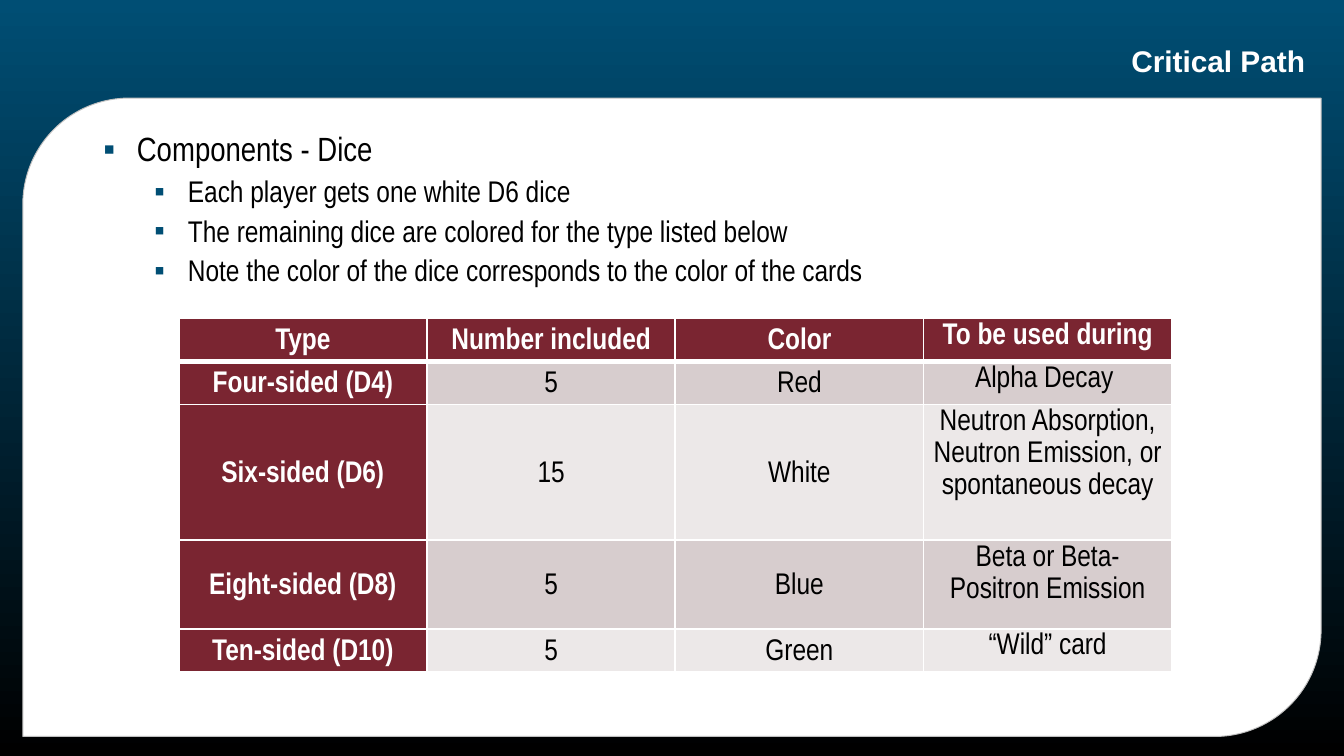
import lxml.etree
import pptx
import pptx.dml.color
import pptx.enum.shapes
import pptx.enum.text
import pptx.oxml.ns
import pptx.util

RGB = pptx.dml.color.RGBColor
BLUE = RGB(0x00, 0x4E, 0x74)
BLACK = RGB(0x00, 0x00, 0x00)
WHITE = RGB(0xFF, 0xFF, 0xFF)
GREY = RGB(0xBF, 0xBF, 0xBF)
WINE = RGB(0x7A, 0x25, 0x31)
DARK = RGB(0xD7, 0xCD, 0xCE)
LIGHT = RGB(0xEC, 0xE8, 0xE8)

WIDE = 10
HIGH = WIDE * 9 / 16
NARROW = "Arial Narrow"
ALIGN = pptx.enum.text.PP_ALIGN
ANCHOR = pptx.enum.text.MSO_ANCHOR
inch = pptx.util.Inches

POINTS = [
    (0, "Components - Dice"),
    (1, "Each player gets one white D6 dice"),
    (1, "The remaining dice are colored for the type listed below"),
    (1, "Note the color of the dice corresponds to the color of the cards"),
]
DICE = [
    ("Type", "Number included", "Color", "To be used during"),
    ("Four-sided (D4)", "5", "Red", "Alpha Decay "),
    ("Six-sided (D6)", "15", "White",
     "Neutron Absorption, Neutron Emission, or spontaneous decay"),
    ("Eight-sided (D8)", "5", "Blue", "Beta or Beta-Positron Emission"),
    ("Ten-sided (D10)", "5", "Green", "“Wild” card"),
]
ROWS = [0.32, 0.32, 1.01, 0.66, 0.32]


def place(box):
    return [inch(side) for side in box]


def add(parent, tag, **attrs):
    return lxml.etree.SubElement(parent, pptx.oxml.ns.qn(tag), **attrs)


def style(para, face, size, color, bold=False):
    for run in para.runs:
        font = run.font
        font.name, font.size, font.bold = face, pptx.util.Pt(size), bold
        font.color.rgb = color


def bullet(para, left):
    props = para._p.get_or_add_pPr()
    props.set("marL", str(inch(left)))
    props.set("indent", str(inch(-0.25)))
    add(add(props, "a:buClr"), "a:srgbClr", val=str(BLUE))
    add(props, "a:buFont", typeface="Arial")
    add(props, "a:buChar", char="▪")


def edge(cell, top, bottom):
    props = cell._tc.get_or_add_tcPr()
    for tag, width in (("a:lnL", 1), ("a:lnR", 1), ("a:lnT", top), ("a:lnB", bottom)):
        line = add(props, tag, w=str(pptx.util.Pt(width)))
        add(add(line, "a:solidFill"), "a:srgbClr", val=str(WHITE))


def back(slide, box):
    # Gradient behind a white panel
    fill = slide.background.fill
    fill.gradient()
    fill.gradient_angle = 270
    for stop, color in zip(fill.gradient_stops, (BLUE, BLACK)):
        stop.color.rgb = color
    kind = pptx.enum.shapes.MSO_SHAPE.ROUND_2_DIAG_RECTANGLE
    panel = slide.shapes.add_shape(kind, *place(box))
    panel.shadow.inherit = False
    panel.fill.solid()
    panel.fill.fore_color.rgb = WHITE
    panel.line.color.rgb = GREY
    panel.line.width = pptx.util.Pt(0.5)


def title(slide, box, text):
    frame = slide.shapes.add_textbox(*place(box)).text_frame
    frame.word_wrap = True
    frame.vertical_anchor = ANCHOR.MIDDLE
    frame.text = text
    para = frame.paragraphs[0]
    para.alignment = ALIGN.RIGHT
    para.line_spacing = 0.85
    style(para, "Arial", 16, WHITE, True)


def body(slide, box, points):
    frame = slide.shapes.add_textbox(*place(box)).text_frame
    frame.word_wrap = True
    frame.text = "\n".join(text for _, text in points)
    for row, (para, (level, _)) in enumerate(zip(frame.paragraphs, points)):
        para.level = level
        bullet(para, (0.25, 0.63)[level])
        para.line_spacing = 0.9
        if row:
            para.space_before = pptx.util.Pt(4)
        style(para, NARROW, (18, 16)[level], BLACK)


def grid(slide, box, data):
    cols = len(data[0])
    table = slide.shapes.add_table(len(data), cols, *place(box)).table
    table.horz_banding = False
    for col in table.columns:
        col.width = inch(box[2] / cols)
    for r, line in enumerate(data):
        table.rows[r].height = inch(ROWS[r])
        for c, text in enumerate(line):
            cell = table.cell(r, c)
            head = r == 0 or c == 0
            edge(cell, 3 if r == 1 else 1, 3 if r == 0 else 1)
            cell.fill.solid()
            cell.fill.fore_color.rgb = WINE if head else (LIGHT, DARK)[r % 2]
            cell.margin_left = cell.margin_right = inch(0.07)
            cell.margin_top = cell.margin_bottom = 0
            # The last column hangs from the top
            cell.vertical_anchor = ANCHOR.TOP if c == cols - 1 else ANCHOR.MIDDLE
            cell.text_frame.text = text
            para = cell.text_frame.paragraphs[0]
            para.alignment = ALIGN.CENTER
            para.line_spacing = 1.15
            style(para, NARROW, 16, WHITE if head else BLACK, head)


def main():
    deck = pptx.Presentation()
    deck.slide_width, deck.slide_height = inch(WIDE), inch(HIGH)
    slide = deck.slides.add_slide(deck.slide_layouts[6])
    back(slide, (0.17, 0.73, 9.66, 4.75))
    title(slide, (0.45, 0.21, 9.36, 0.52), "Critical Path")
    body(slide, (0.67, 0.94, 9.12, 4), POINTS)
    grid(slide, (1.33, 2.37, 7.39, sum(ROWS)), DICE)
    deck.save("out.pptx")


if __name__ == "__main__":
    main()
